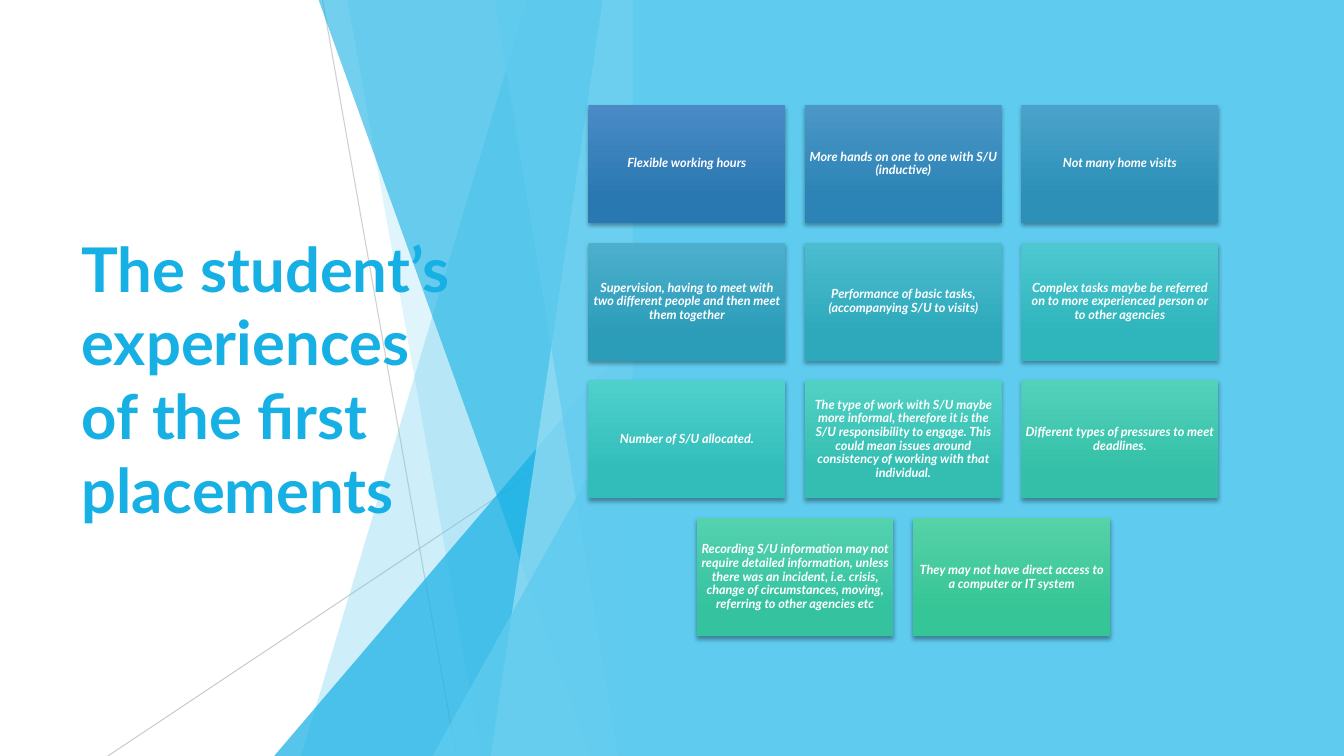
from lxml.etree import SubElement
from pptx import Presentation
from pptx.dml.color import RGBColor
from pptx.enum.shapes import MSO_CONNECTOR, MSO_SHAPE
from pptx.enum.text import MSO_ANCHOR, MSO_AUTO_SIZE, PP_ALIGN
from pptx.oxml.ns import qn
from pptx.util import Cm, Pt

SLIDE_WIDTH, SLIDE_HEIGHT = 33.87, 19.05
PANEL_LEFT = 15.95
SKY, AZURE, PALE, GREY = "5FCBEF", "17B0E4", "9FE0F5", "BFBFBF"
TITLE = "The student’s experiences of the first placements"
TITLE_FONT = {"name": "Lato", "size": Pt(44), "bold": True, "italic": False}
CARD_FONT = {"name": "Lato", "size": Pt(9), "bold": True, "italic": True}

RAYS = [
    ((7.82, 0), (4.45, 19.05), 75),
    ((0, 10.24), (13.23, 19.05), 80),
]
SHARDS = [
    ("band", 2.67, 8.36, SKY, 30),
    ("band", 7.19, 3.81, SKY, 20),
    ("triangle", 9.04, 10.59, AZURE, 72),
    ("band", 7.92, 1.07, AZURE, 60),
    ("band", 0.76, 3.58, PALE, 70),
    ("band", 3.48, 0.38, SKY, 65),
    ("triangle", 5.05, 9.07, SKY, 80),
]
EXPERIENCES = [
    [
        ("Flexible working hours", "4A8BC6", "2A78B2"),
        ("More hands on one to one with S/U (inductive)", "4B97C8", "2B84B5"),
        ("Not many home visits", "4BA3CB", "2C90B7"),
    ],
    [
        ("Supervision, having to meet with two different people and then "
         "meet them together", "4CAFCD", "2C9DB9"),
        ("Performance of basic tasks, (accompanying S/U to visits)",
         "4CBCCF", "2DA9BB"),
        ("Complex tasks maybe be referred on to more experienced person or "
         "to other agencies", "4DC8D0", "2FB5BC"),
    ],
    [
        ("Number of S/U allocated.", "4FD0CD", "32BDBA"),
        ("The type of work with S/U maybe more informal, therefore it is the "
         "S/U responsibility to engage. This could mean issues around "
         "consistency of working with that individual.", "51D1C3", "33BEB1"),
        ("Different types of pressures to meet deadlines.", "53D1B9", "34C0A8"),
    ],
    [
        ("Recording S/U information may not require detailed information, "
         "unless there was an incident, i.e. crisis, change of circumstances, "
         "moving, referring to other agencies etc", "54D2B0", "35C29F"),
        ("They may not have direct access to a computer or IT system",
         "56D2A7", "36C596"),
    ],
]


def colour(code):
    return RGBColor.from_string(code)


def apply_format(target, values):
    for attribute, value in values.items():
        setattr(target, attribute, value)


def set_opacity(part, percent):
    tint = part.element.spPr.find(".//" + qn("a:srgbClr"))
    SubElement(tint, qn("a:alpha"), val=str(percent * 1000))


def fill_flat(part, code):
    part.shadow.inherit = False
    part.fill.solid()
    part.fill.fore_color.rgb = colour(code)
    part.line.fill.background()


def write(frame, text, font, code, align, line_spacing):
    paragraph = frame.paragraphs[0]
    apply_format(paragraph, {"alignment": align, "line_spacing": line_spacing})
    run = paragraph.add_run()
    run.text = text
    apply_format(run.font, font)
    run.font.color.rgb = colour(code)


def add_shards(slide, right, top, height):
    bottom = top + height
    for (start_x, start_y), (end_x, end_y), opacity in RAYS:
        ray = slide.shapes.add_connector(
            MSO_CONNECTOR.STRAIGHT, Cm(right - start_x), Cm(top + start_y),
            Cm(right - end_x), Cm(top + end_y))
        ray.line.width = Pt(0.75)
        ray.line.color.rgb = colour(GREY)
        set_opacity(ray, opacity)
        SubElement(ray.element.spPr, qn("a:effectLst"))
    for kind, first, second, code, opacity in SHARDS:
        if kind == "band":
            outline = slide.shapes.build_freeform(Cm(right - first), Cm(top))
            outline.add_line_segments([
                (Cm(right), Cm(top)), (Cm(right), Cm(bottom)),
                (Cm(right - second), Cm(bottom))])
            shard = outline.convert_to_shape()
        else:
            shard = slide.shapes.add_shape(
                MSO_SHAPE.ISOSCELES_TRIANGLE, Cm(right - first),
                Cm(bottom - second), Cm(first), Cm(second))
            shard.adjustments[0] = 1
        fill_flat(shard, code)
        set_opacity(shard, opacity)


def add_title(slide, left, top, width, height):
    title = slide.shapes.title
    apply_format(title, {"left": Cm(left), "top": Cm(top),
                         "width": Cm(width), "height": Cm(height)})
    apply_format(title.text_frame, {
        "word_wrap": True, "auto_size": MSO_AUTO_SIZE.NONE,
        "vertical_anchor": MSO_ANCHOR.MIDDLE})
    write(title.text_frame, TITLE, TITLE_FONT, AZURE, PP_ALIGN.LEFT, 1.0)
    slide.shapes.element.append(title.element)


def add_panel(slide, left, top, width, height):
    panel = slide.shapes.add_shape(
        MSO_SHAPE.RECTANGLE, Cm(left), Cm(top), Cm(width), Cm(height))
    fill_flat(panel, SKY)


def add_card(slide, left, top, width, height, experience):
    text, light, dark = experience
    card = slide.shapes.add_shape(
        MSO_SHAPE.RECTANGLE, Cm(left), Cm(top), Cm(width), Cm(height))
    card.line.fill.background()
    card.fill.gradient()
    card.fill.gradient_angle = 270
    for stop, code, position in zip(
            card.fill.gradient_stops, (light, dark), (0, 0.78)):
        stop.color.rgb = colour(code)
        stop.position = position
    card.shadow.inherit = False
    effects = card.element.spPr.find(qn("a:effectLst"))
    shadow = SubElement(effects, qn("a:outerShdw"), blurRad=str(Pt(3)),
                        dist=str(Pt(2)), dir="5400000", rotWithShape="0")
    shade = SubElement(shadow, qn("a:srgbClr"), val="000000")
    SubElement(shade, qn("a:alpha"), val="35000")
    inset = Cm(0.1)
    apply_format(card.text_frame, {
        "word_wrap": True, "vertical_anchor": MSO_ANCHOR.MIDDLE,
        "margin_left": inset, "margin_right": inset,
        "margin_top": inset, "margin_bottom": inset})
    write(card.text_frame, text, CARD_FONT, "FFFFFF", PP_ALIGN.CENTER, 0.9)


def add_experiences(slide, left, top, width):
    card_width = width / 3.2
    card_height = card_width * 0.6
    gap = card_width * 0.1
    for row, experiences in enumerate(EXPERIENCES):
        count = len(experiences)
        row_width = count * card_width + (count - 1) * gap
        row_left = left + (width - row_width) / 2
        for column, experience in enumerate(experiences):
            add_card(slide, row_left + column * (card_width + gap),
                     top + row * (card_height + gap),
                     card_width, card_height, experience)


def main():
    deck = Presentation()
    deck.slide_width, deck.slide_height = Cm(SLIDE_WIDTH), Cm(SLIDE_HEIGHT)
    slide = deck.slides.add_slide(deck.slide_layouts[5])
    add_shards(slide, PANEL_LEFT, 0, SLIDE_HEIGHT)
    add_title(slide, 1.8, 3.84, 9.86, 11.38)
    add_panel(slide, PANEL_LEFT, 0, SLIDE_WIDTH - PANEL_LEFT, SLIDE_HEIGHT)
    add_experiences(slide, 14.83, 2.64, 15.87)
    deck.save("out.pptx")


if __name__ == "__main__":
    main()
